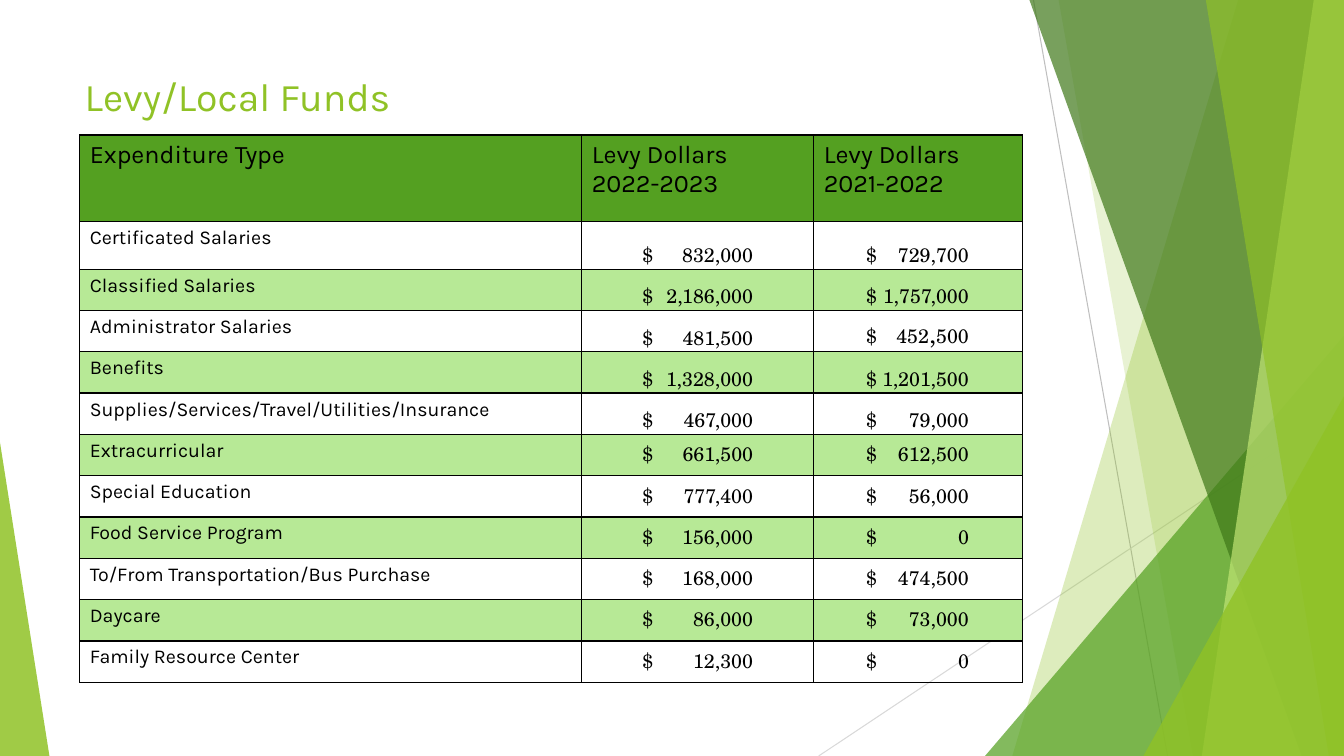
from lxml import etree
from pptx import Presentation
from pptx.dml.color import RGBColor
from pptx.enum import shapes, text
from pptx.oxml import ns
from pptx.util import Inches, Pt

COLORS = {
    "lime": "90C226", "green": "54A021", "forest": "3F7819", "pale": "C0E474",
    "band": "B7E996", "black": "000000", "gray": "BFBFBF", "silver": "D9D9D9",
}
LABEL_FONT, MONEY_FONT = "Karla", "TeX Gyre Schola"
WIDTH, HEIGHT = 13.33, 7.5

HEADER = [["Expenditure Type"], ["Levy Dollars", "2022-2023"], ["Levy Dollars", "2021-2022"]]
EXPENSES = [
    ("Certificated Salaries", "832,000", "729,700"),
    ("Classified Salaries", "2,186,000", "1,757,000"),
    ("Administrator Salaries", "481,500", "452,500"),
    ("Benefits", "1,328,000", "1,201,500"),
    ("Supplies/Services/Travel/Utilities/Insurance", "467,000", "79,000"),
    ("Extracurricular", "661,500", "612,500"),
    ("Special Education", "777,400", "56,000"),
    ("Food Service Program", "156,000", "0"),
    ("To/From Transportation/Bus Purchase", "168,000", "474,500"),
    ("Daycare", "86,000", "73,000"),
    ("Family Resource Center", "12,300", "0"),
]
COLUMNS = [4.98, 2.3, 2.07]
ROWS = [0.86, 0.47] + [0.41] * 10
# Left inset of the dollar sign and right tab of the amount, by column
MONEY_LAYOUT = {1: (0.6, 1.1), 2: (0.52, 1.02)}
BOTTOM_ROWS = 5  # the first amounts sit on the cell's bottom edge


def rgb(name):
    return RGBColor.from_string(COLORS[name])


def add_span(para, words, size, font, color="black"):
    span = para.add_run()
    span.text = words
    span.font.size = Pt(size)
    span.font.name = font
    span.font.bold = False
    span.font.color.rgb = rgb(color)


def paint(shape, color, opacity):
    shape.shadow.inherit = False
    shape.fill.solid()
    shape.fill.fore_color.rgb = rgb(color)
    shape.line.fill.background()
    tint = shape.element.find(".//" + ns.qn("a:srgbClr"))
    etree.SubElement(tint, ns.qn("a:alpha"), val=str(opacity * 1000))


def add_panel(page, top_x, bottom_x, color, opacity):
    """Full-height panel with a slanted left edge, reaching the right edge."""
    outline = page.shapes.build_freeform(Inches(top_x), 0)
    outline.add_line_segments([
        (Inches(WIDTH), 0), (Inches(WIDTH), Inches(HEIGHT)),
        (Inches(bottom_x), Inches(HEIGHT)),
    ], close=True)
    paint(outline.convert_to_shape(), color, opacity)


def add_corner(page, left, top, width, peak, color, opacity):
    """Triangle standing on the bottom edge."""
    corner = page.shapes.add_shape(
        shapes.MSO_SHAPE.ISOSCELES_TRIANGLE,
        Inches(left), Inches(top), Inches(width), Inches(HEIGHT - top))
    corner.adjustments[0] = peak
    paint(corner, color, opacity)


def add_line(page, start, end, color):
    line = page.shapes.add_connector(
        shapes.MSO_CONNECTOR.STRAIGHT, *[Inches(v) for v in start + end])
    line.line.color.rgb = rgb(color)
    line.line.width = Pt(0.75)
    etree.SubElement(line.element.spPr, ns.qn("a:effectLst"))


def add_decoration(page):
    add_line(page, (10.25, 0), (11.58, HEIGHT), "gray")
    add_line(page, (WIDTH, 4.03), (8.12, HEIGHT), "silver")
    add_panel(page, 12.28, 10.04, "lime", 30)
    add_panel(page, 10.5, 11.83, "lime", 20)
    add_corner(page, 9.77, 3.33, 3.56, 1, "green", 72)
    add_panel(page, 10.21, 12.91, "forest", 70)
    add_panel(page, 13.03, 11.92, "pale", 70)
    add_panel(page, 11.96, 13.18, "lime", 65)
    add_corner(page, 11.34, 3.93, 1.99, 1, "lime", 80)
    add_corner(page, 0, 4.39, 0.49, 0, "lime", 85)


def add_title(page, words):
    title = page.shapes.title
    title.left, title.top = Inches(0.74), Inches(0.67)
    title.width, title.height = Inches(9.4), Inches(0.56)
    title.text_frame.vertical_anchor = text.MSO_ANCHOR.BOTTOM
    para = title.text_frame.paragraphs[0]
    para.alignment = text.PP_ALIGN.LEFT
    add_span(para, words, 28, LABEL_FONT, "lime")


def style_cell(cell, color):
    """Fill, or none, and a thin black border on every side."""
    if color:
        cell.fill.solid()
        cell.fill.fore_color.rgb = rgb(color)
    else:
        cell.fill.background()
    props = cell._tc.get_or_add_tcPr()
    for place, side in enumerate(("a:lnL", "a:lnR", "a:lnT", "a:lnB")):
        border = etree.Element(ns.qn(side), w=str(Pt(1)))
        solid = etree.SubElement(border, ns.qn("a:solidFill"))
        etree.SubElement(solid, ns.qn("a:srgbClr"), val=COLORS["black"])
        props.insert(place, border)


def write_label(cell, lines, size):
    cell.text_frame.word_wrap = True
    for number, words in enumerate(lines):
        frame = cell.text_frame
        para = frame.add_paragraph() if number else frame.paragraphs[0]
        add_span(para, words, size, LABEL_FONT)


def write_money(cell, amount, column, on_bottom):
    inset, stop = MONEY_LAYOUT[column]
    cell.margin_left, cell.margin_right = Inches(inset), Inches(0.01)
    if on_bottom:
        cell.vertical_anchor = text.MSO_ANCHOR.BOTTOM
        cell.margin_top, cell.margin_bottom = Inches(0.01), 0
    para = cell.text_frame.paragraphs[0]
    para.alignment = text.PP_ALIGN.LEFT
    tabs = etree.SubElement(para._p.get_or_add_pPr(), ns.qn("a:tabLst"))
    etree.SubElement(tabs, ns.qn("a:tab"), pos=str(Inches(stop)), algn="r")
    if amount == "452,500":  # this amount has a larger comma
        for words, size in (("$\t452", 14), (",", 18), ("500", 14)):
            add_span(para, words, size, MONEY_FONT)
    else:
        add_span(para, "$\t" + amount, 14, MONEY_FONT)


def add_expense_table(page):
    table = page.shapes.add_table(
        len(ROWS), len(COLUMNS), Inches(0.79), Inches(1.34),
        Inches(sum(COLUMNS)), Inches(sum(ROWS))).table
    table.first_row = table.horz_banding = False
    for column, width in zip(table.columns, COLUMNS):
        column.width = Inches(width)
    for row, height in zip(table.rows, ROWS):
        row.height = Inches(height)

    # Header
    for column, lines in enumerate(HEADER):
        style_cell(table.cell(0, column), "green")
        write_label(table.cell(0, column), lines, 18)

    # Expenses, every second row tinted
    for row, (label, *amounts) in enumerate(EXPENSES, 1):
        for column in range(len(COLUMNS)):
            style_cell(table.cell(row, column), None if row % 2 else "band")
        write_label(table.cell(row, 0), [label], 14)
        for column, amount in enumerate(amounts, 1):
            write_money(table.cell(row, column), amount, column, row <= BOTTOM_ROWS)


def main():
    deck = Presentation()
    deck.slide_width, deck.slide_height = Inches(WIDTH), Inches(HEIGHT)
    page = deck.slides.add_slide(deck.slide_layouts[5])
    add_decoration(page)
    add_title(page, "Levy/Local Funds")
    add_expense_table(page)
    deck.save("out.pptx")


if __name__ == "__main__":
    main()
